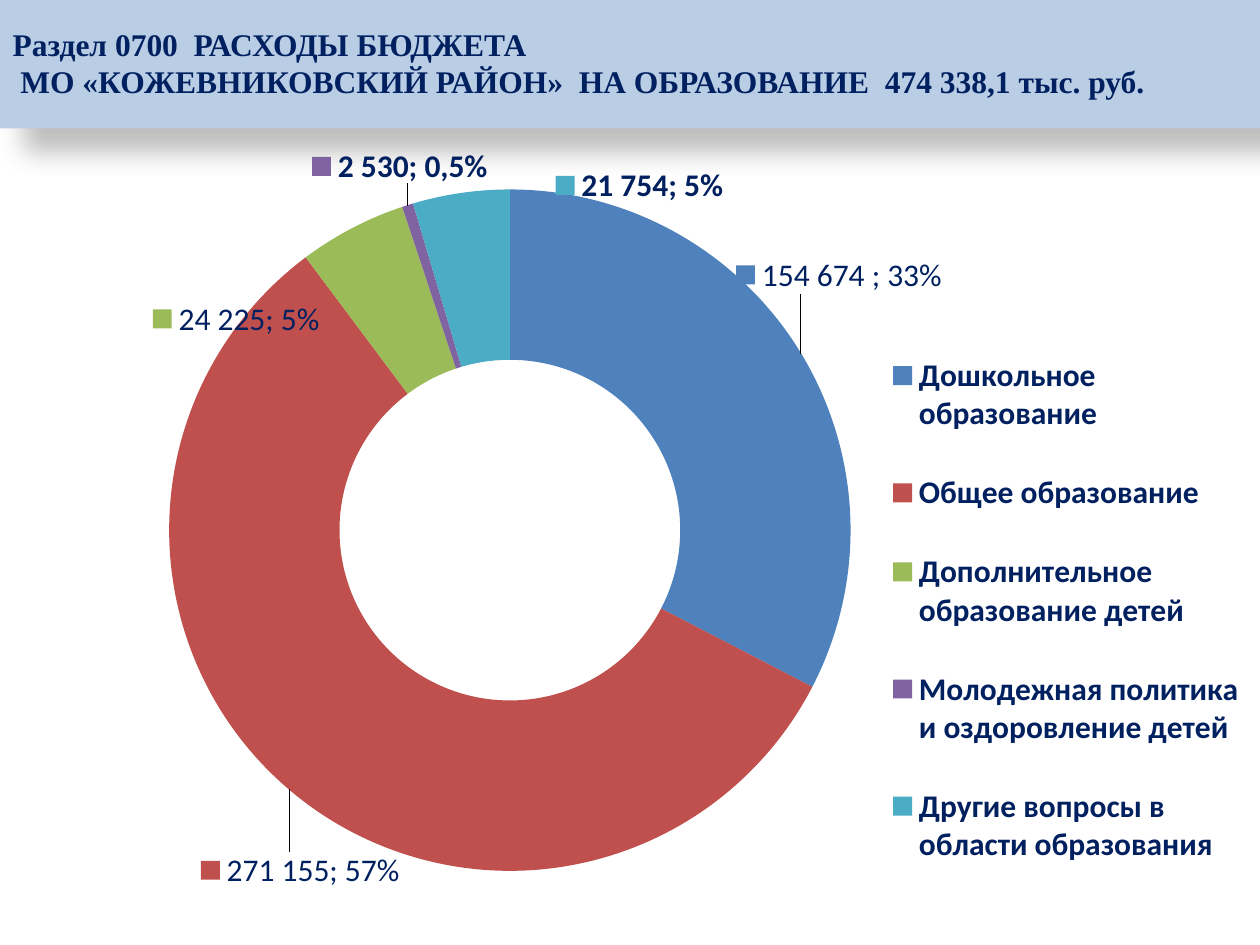
from lxml import etree
from pptx import Presentation
from pptx.chart.data import CategoryChartData
from pptx.dml.color import RGBColor
from pptx.enum.chart import XL_CHART_TYPE as ChartType, XL_LEGEND_POSITION as LegendPosition
from pptx.enum.text import MSO_ANCHOR, PP_ALIGN
from pptx.oxml import parse_xml
from pptx.oxml.ns import nsdecls, qn
from pptx.util import Inches, Pt

COLORS = {"band": "B9CDE5", "navy": "002060", "black": "000000"}

# category, value, colour, label text, label bold, label shift (x, y)
SECTORS = [
    ("Дошкольное образование", 154674, "4F81BD", "154 674 ; 33%", False, (0.1, -0.16)),
    ("Общее образование", 271155, "C0504D", "271 155; 57%", False, (-0.04, 0.19)),
    ("Дополнительное образование детей", 24225, "9BBB59", "24 225; 5%", False, (-0.14, 0.02)),
    ("Молодежная политика и оздоровление детей", 2530, "8064A2", "2 530; 0,5%", True, (-0.03, -0.16)),
    ("Другие вопросы в области образования", 21754, "4BACC6", "21 754; 5%", True, (0.15, -0.12)),
]


def style_font(font, color, **values):
    for name, value in values.items():
        setattr(font, name, value)
    font.color.rgb = RGBColor.from_string(COLORS[color])


def manual_layout(**values):
    """Return a c:layout element with the given manual layout values."""
    layout = etree.Element(qn("c:layout"))
    manual = etree.SubElement(layout, qn("c:manualLayout"))
    for name, value in values.items():
        etree.SubElement(manual, qn(f"c:{name}")).set("val", str(value))
    return layout


deck = Presentation()
deck.slide_width, deck.slide_height = Inches(10), Inches(7.5)
page = deck.slides.add_slide(deck.slide_layouts[5])

# Title band
title = page.shapes.title
title.left, title.top = Inches(0), Inches(-0.03)
title.width, title.height = Inches(10), Inches(1.05)
title.fill.solid()
title.fill.fore_color.rgb = RGBColor.from_string(COLORS["band"])
title._element.spPr.append(parse_xml(
    f'<a:effectLst {nsdecls("a")}>'
    f'<a:outerShdw blurRad="{Pt(15)}" dist="{Pt(18)}" dir="2700000" algn="tl" rotWithShape="0">'
    f'<a:srgbClr val="{COLORS["black"]}"><a:alpha val="26000"/></a:srgbClr>'
    '</a:outerShdw></a:effectLst>'))
frame = title.text_frame
frame.word_wrap = True
frame.vertical_anchor = MSO_ANCHOR.MIDDLE
para = frame.paragraphs[0]
para.text = ("Раздел 0700  РАСХОДЫ БЮДЖЕТА\v"
             " МО «КОЖЕВНИКОВСКИЙ РАЙОН»  НА ОБРАЗОВАНИЕ  474 338,1 тыс. руб.")
para.alignment = PP_ALIGN.LEFT
for span in para.runs:
    style_font(span.font, "navy", name="Times New Roman", size=Pt(18), bold=True)

# Doughnut chart
data = CategoryChartData(number_format="#,##0")
data.categories = [sector[0] for sector in SECTORS]
data.add_series("Series 1", [sector[1] for sector in SECTORS])
chart = page.shapes.add_chart(ChartType.DOUGHNUT, Inches(1.2), Inches(1.17),
                              Inches(8.8), Inches(6.07), data).chart
chart.has_title = False
style_font(chart.font, "black", name="Calibri", size=Pt(10))

plot_area = chart._chartSpace.chart.plotArea
for old in plot_area.findall(qn("c:layout")):
    plot_area.remove(old)
plot_area.insert(0, manual_layout(layoutTarget="inner", xMode="edge", yMode="edge",
                                  x=0.016, y=0.055, w=0.615, h=0.891))

chart.has_legend = True
legend = chart.legend
legend.position = LegendPosition.RIGHT
legend.include_in_layout = False
style_font(legend.font, "navy", name="Calibri", size=Pt(18), bold=True)
for old in legend._element.findall(qn("c:layout")):
    legend._element.remove(old)
legend._element.find(qn("c:legendPos")).addnext(
    manual_layout(xMode="edge", yMode="edge", x=0.66, y=0.22, w=0.33, h=0.77))

# Slices and their labels
plot = chart.plots[0]
plot.vary_by_categories = True
series = plot.series[0]
labels = series.data_labels
for name, value in {"show_value": True, "show_percentage": True, "show_legend_key": True,
                    "number_format": "#,##0.000", "number_format_is_linked": False}.items():
    setattr(labels, name, value)
style_font(labels.font, "navy", name="Calibri", size=Pt(18), bold=True)

for index, (_, _, color, text, bold, _) in enumerate(SECTORS):
    point = series.points[index]
    point.format.fill.solid()
    point.format.fill.fore_color.rgb = RGBColor.from_string(color)
    para = point.data_label.text_frame.paragraphs[0]
    span = para.add_run()
    span.text = text
    style_font(span.font, "navy", name="Calibri", size=Pt(18), bold=bold)

for sector, label in zip(SECTORS, labels._element.findall(qn("c:dLbl"))):
    x, y = sector[-1]
    label.find(qn("c:idx")).addnext(manual_layout(x=x, y=y))
    for flag in ("showLegendKey", "showVal", "showPercent"):
        label.find(qn(f"c:{flag}")).set("val", "1")

deck.save("out.pptx")
